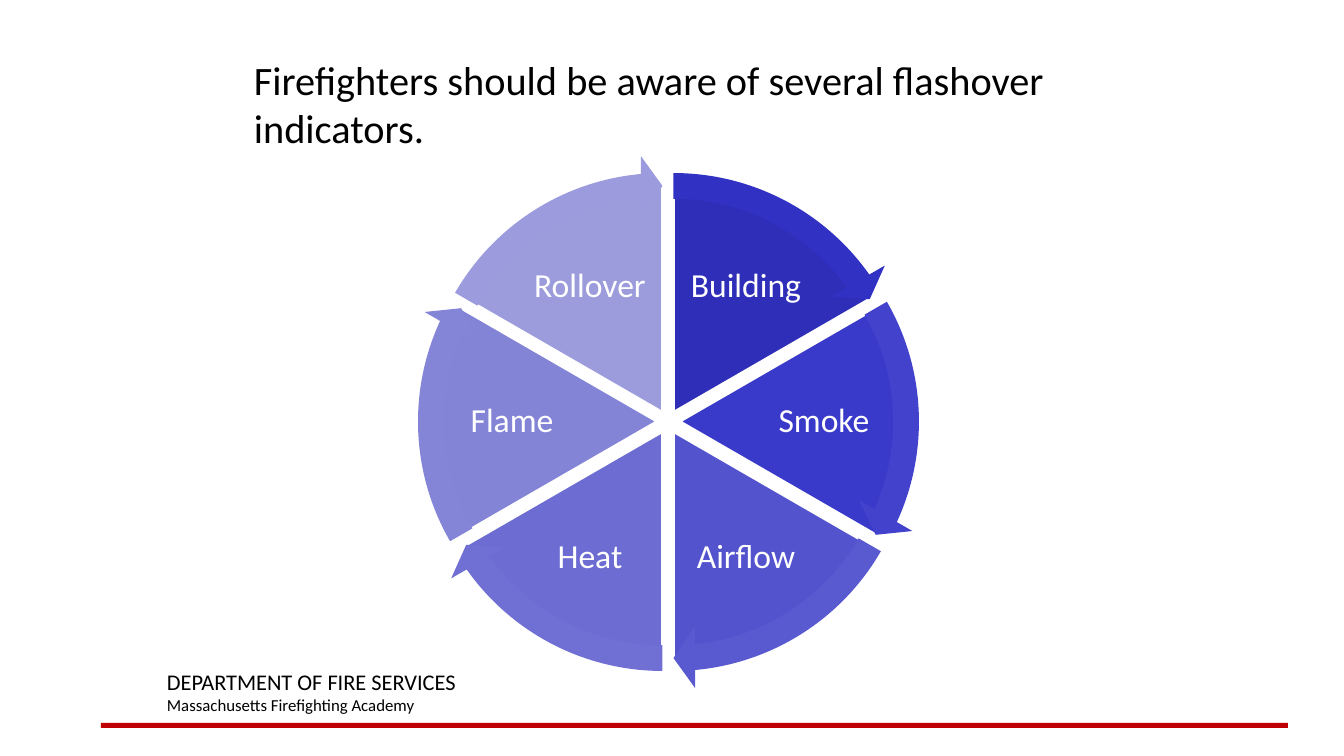
from math import cos, radians, sin

from pptx import Presentation
from pptx.dml.color import RGBColor
from pptx.enum.shapes import MSO_SHAPE
from pptx.enum.text import MSO_ANCHOR, PP_ALIGN
from pptx.util import Emu, Pt

RECT, PIE, ARROW = MSO_SHAPE.RECTANGLE, MSO_SHAPE.PIE, MSO_SHAPE.CIRCULAR_ARROW
TOP, MIDDLE = MSO_ANCHOR.TOP, MSO_ANCHOR.MIDDLE
LEFT, CENTER = PP_ALIGN.LEFT, PP_ALIGN.CENTER

TITLE = [("Firefighters should be aware of several flashover indicators.", 28.8)]
FOOTER = [("DEPARTMENT OF FIRE SERVICES", 16),
          ("Massachusetts Firefighting Academy", 12)]
SIGNS = [("Building", "2E2EB9", "3131C3"),
         ("Smoke", "3A3ACA", "4242CC"),
         ("Airflow", "5353CE", "5959D0"),
         ("Heat", "6C6CD2", "6F6FD4"),
         ("Flame", "8484D7", "8585D8"),
         ("Rollover", "9C9CDD", "9B9BDD")]
HUB = (668, 422)
GAP, REACH = 11, 156
DISC, RING = 459, 515
STEP, SWEEP, FULL, FIRST = 36, 32.72, 216, 162


def px(n):
    return Emu(round(n * 914400 / 100.8))


def color(code):
    return RGBColor.from_string(code)


def spot(i, dist, wide, high):
    turn = radians(60 * i + 30)
    x = HUB[0] + dist * sin(turn)
    y = HUB[1] - dist * cos(turn)
    return round(x - wide / 2), round(y - high / 2), wide, high


def draw(kind, box, fill, line=None):
    shape = slide.shapes.add_shape(kind, *map(px, box))
    shape.shadow.inherit = False
    shape.fill.solid()
    shape.fill.fore_color.rgb = color(fill)
    if line:
        shape.line.color.rgb = color(line)
        shape.line.width = Pt(2)
    else:
        shape.line.fill.background()
    return shape


def write(box, lines, ink="000000", align=LEFT, anchor=TOP, inset=None, space=1.0):
    frame = slide.shapes.add_textbox(*map(px, box)).text_frame
    frame.word_wrap = True
    frame.vertical_anchor = anchor
    if inset is not None:
        frame.margin_left = frame.margin_right = px(inset)
        frame.margin_top = frame.margin_bottom = px(inset)
    for i, (text, size) in enumerate(lines):
        para = frame.add_paragraph() if i else frame.paragraphs[0]
        para.alignment = align
        para.line_spacing = space
        run = para.add_run()
        run.text = text
        run.font.name = "Calibri"
        run.font.size = Pt(size)
        run.font.color.rgb = color(ink)


deck = Presentation()
deck.slide_width, deck.slide_height = px(1344), px(756)
slide = deck.slides.add_slide(deck.slide_layouts[6])

draw(RECT, (101, 723, 1187, 5), "C00000")
write((157, 663, 572, 57), FOOTER)

for i, (name, fill, _) in enumerate(SIGNS):
    start = (FIRST + STEP * i) % FULL
    slice_ = draw(PIE, spot(i, GAP, DISC, DISC), fill, "FFFFFF")
    slice_.adjustments[0] = start
    slice_.adjustments[1] = (start + STEP - 1) % FULL + 1
    size = (126, 90) if i % 3 == 1 else (120, 93)
    write(spot(i, REACH, *size), [(name, 24)], "FFFFFF", CENTER, MIDDLE, 3, 0.9)

for i, (_, _, fill) in enumerate(SIGNS):
    start = (FIRST + STEP * i) % FULL
    arrow = draw(ARROW, spot(i, GAP, RING, RING), fill)
    for k, value in enumerate((0.05, 3.28, (start + SWEEP) % FULL, start, 0.06)):
        arrow.adjustments[k] = value

write((244, 50, 890, 101), TITLE)

deck.save("out.pptx")
